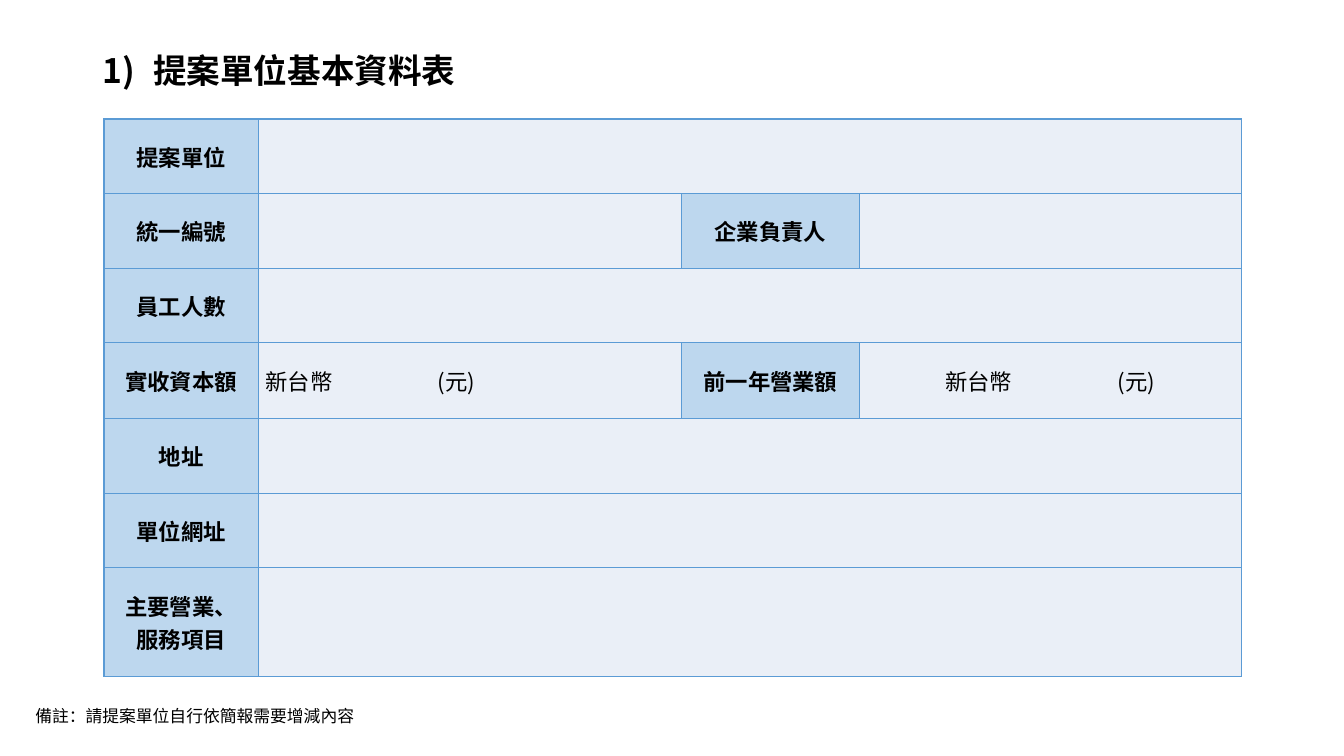
from lxml import etree
from pptx import Presentation
from pptx.dml.color import RGBColor
from pptx.enum.text import MSO_ANCHOR, PP_ALIGN
from pptx.oxml.ns import qn
from pptx.util import Cm, Pt

CENTER, LEFT = PP_ALIGN.CENTER, PP_ALIGN.LEFT
MIDDLE, TOP = MSO_ANCHOR.MIDDLE, MSO_ANCHOR.TOP
FONT = "Noto Sans CJK SC"
BLACK, LABEL_FILL, VALUE_FILL, BORDER = "000000", "BDD7EE", "EAEFF7", "5B9BD5"
AMOUNT = "新台幣\t(元)"
AMOUNT_TAB = Cm(4.34)

COLUMN_WIDTHS = [3.89, 10.67, 4.47, 9.63]
ROW_HEIGHTS = [1.88, 1.88, 1.88, 1.91, 1.88, 1.88, 2.74]
# Two texts: a label and one wide value. Four texts: two label and value pairs.
ROWS = [
    ["提案單位", ""],
    ["統一編號", "", "企業負責人", ""],
    ["員工人數", ""],
    ["實收資本額", AMOUNT, "前一年營業額", AMOUNT],
    ["地址", ""],
    ["單位網址", ""],
    ["主要營業、\n服務項目", ""],
]


def color(hex_string):
    return RGBColor.from_string(hex_string)


def write(frame, text, size, bold=False, align=LEFT):
    frame.text = text
    for para in frame.paragraphs:
        para.alignment = align
        para.font.size = Pt(size)
        for span in para.runs:
            span.font.size = Pt(size)
            span.font.bold = bold
            span.font.name = FONT
            span.font.color.rgb = color(BLACK)
            east_asian = etree.SubElement(span.font._element, qn("a:ea"))
            east_asian.set("typeface", FONT)


def add_text(page, left, top, width, height, text, size, bold=False, anchor=TOP):
    box = page.shapes.add_textbox(Cm(left), Cm(top), Cm(width), Cm(height))
    frame = box.text_frame
    frame.word_wrap = True
    frame.vertical_anchor = anchor
    write(frame, text, size, bold)
    return frame.paragraphs[0]


def number_paragraph(para):
    """Number the paragraph as 1) with a hanging indent."""
    properties = para._p.get_or_add_pPr()
    properties.set("marL", str(Cm(1.27)))
    properties.set("indent", str(-Cm(1.27)))
    bullet = etree.SubElement(properties, qn("a:buAutoNum"))
    bullet.set("type", "arabicParenR")


def add_tab_stop(para, position):
    stops = etree.SubElement(para._p.get_or_add_pPr(), qn("a:tabLst"))
    etree.SubElement(stops, qn("a:tab"), pos=str(position), algn="l")


def style_cell(cell, fill):
    properties = cell._tc.get_or_add_tcPr()
    for side in ("a:lnL", "a:lnR", "a:lnT", "a:lnB"):
        line = etree.SubElement(properties, qn(side), w=str(Pt(1)))
        solid = etree.SubElement(line, qn("a:solidFill"))
        etree.SubElement(solid, qn("a:srgbClr"), val=BORDER)
    cell.fill.solid()
    cell.fill.fore_color.rgb = color(fill)
    cell.vertical_anchor = MIDDLE
    cell.margin_left = cell.margin_right = Cm(0.18)
    cell.margin_top = cell.margin_bottom = 0


def add_profile_table(page):
    frame = page.shapes.add_table(
        len(ROWS), len(COLUMN_WIDTHS), Cm(2.62), Cm(3),
        Cm(sum(COLUMN_WIDTHS)), Cm(sum(ROW_HEIGHTS)))
    table = frame.table
    table.first_row = table.horz_banding = False
    for column, width in zip(table.columns, COLUMN_WIDTHS):
        column.width = Cm(width)
    for row, height in zip(table.rows, ROW_HEIGHTS):
        row.height = Cm(height)

    for r, texts in enumerate(ROWS):
        wide = len(texts) == 2
        for c in range(len(COLUMN_WIDTHS)):
            is_label = c == 0 or (c == 2 and not wide)
            style_cell(table.cell(r, c), LABEL_FILL if is_label else VALUE_FILL)
        if wide:
            table.cell(r, 1).merge(table.cell(r, 3))
        for c, text in enumerate(texts):
            is_label = c % 2 == 0
            text_frame = table.cell(r, c).text_frame
            write(text_frame, text, 16, is_label, LEFT if c == 1 else CENTER)
            if text == AMOUNT:
                add_tab_stop(text_frame.paragraphs[0], AMOUNT_TAB)


def main():
    deck = Presentation()
    deck.slide_width, deck.slide_height = Cm(33.87), Cm(19.05)
    page = deck.slides.add_slide(deck.slide_layouts[6])

    title = add_text(page, 2.34, 1.02, 29.2, 1.62, "提案單位基本資料表", 24, True, MIDDLE)
    title.line_spacing = 0.9
    number_paragraph(title)
    add_profile_table(page)
    add_text(page, 0.64, 17.65, 8.8, 0.79, "備註：請提案單位自行依簡報需要增減內容", 12)

    deck.save("out.pptx")


if __name__ == "__main__":
    main()
